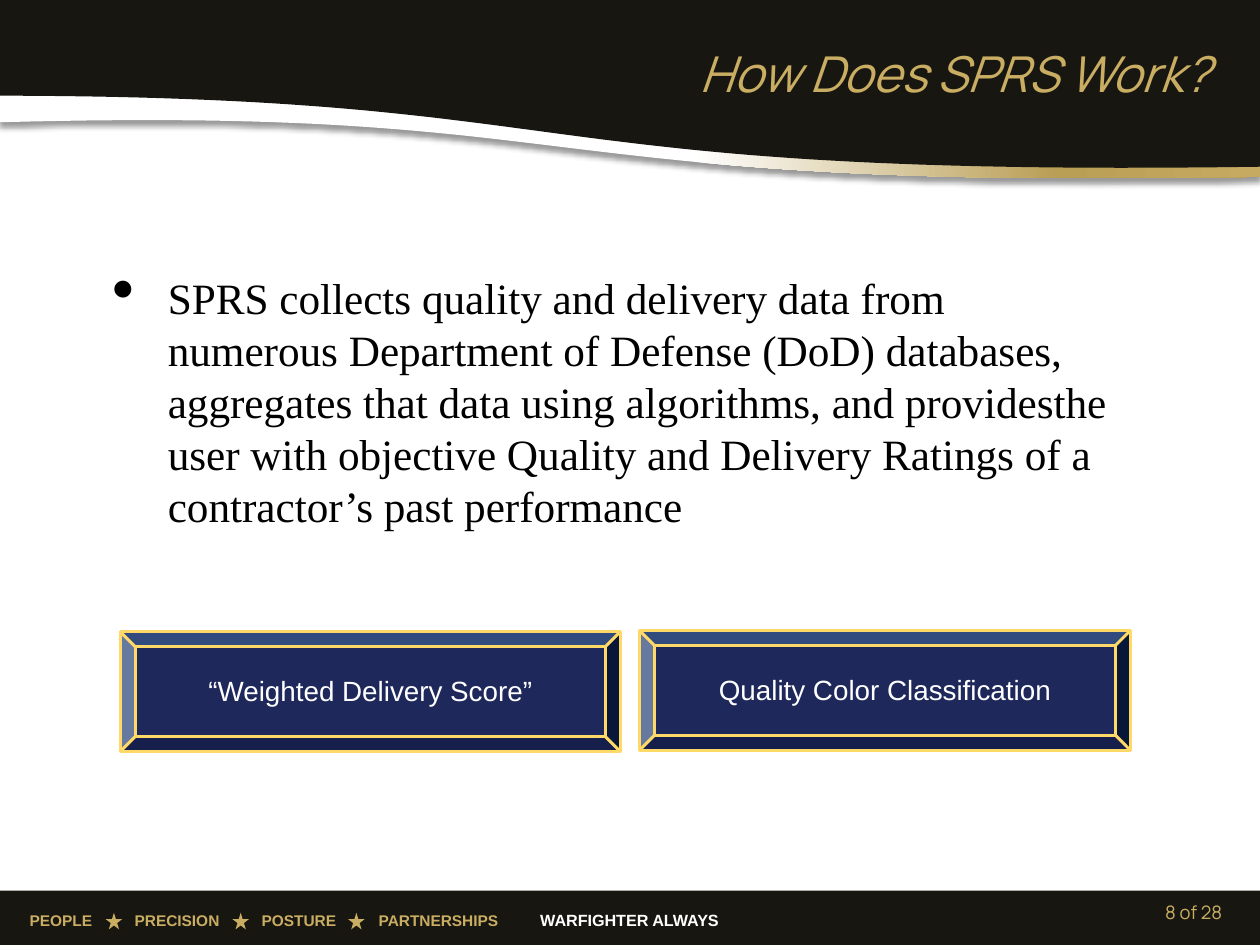
import copy
import lxml.etree
import pptx
import pptx.util
import pptx.dml.color
import pptx.enum.shapes
import pptx.enum.text
import pptx.oxml.ns

Pt = pptx.util.Pt
RGBColor = pptx.dml.color.RGBColor
ALIGN = pptx.enum.text.PP_ALIGN
ANCHOR = pptx.enum.text.MSO_ANCHOR
SHAPE = pptx.enum.shapes.MSO_SHAPE
qn = pptx.oxml.ns.qn

BLACK = RGBColor(0x00, 0x00, 0x00)
WHITE = RGBColor(0xFF, 0xFF, 0xFF)
CHARCOAL = RGBColor(0x17, 0x16, 0x10)
GOLD = RGBColor(0xC9, 0xAD, 0x62)
DARK_GOLD = RGBColor(0xB9, 0x9E, 0x55)
BAND_GOLD = RGBColor(0xC7, 0xAA, 0x61)
TRIM = RGBColor(0xFF, 0xD9, 0x67)
NAVY = RGBColor(0x1F, 0x28, 0x5B)
BEVEL_TOP = RGBColor(0x31, 0x4B, 0x7E)
BEVEL_BOTTOM = RGBColor(0x16, 0x1E, 0x4B)
BEVEL_LEFT = RGBColor(0x66, 0x79, 0x9F)
BEVEL_RIGHT = RGBColor(0x07, 0x16, 0x39)

WIDTH, HEIGHT = 816, 612
deck = pptx.Presentation()
deck.slide_width, deck.slide_height = Pt(WIDTH), Pt(HEIGHT)
page = deck.slides.add_slide(deck.slide_layouts[6])


def add_outline(points, color):
    corners = [(Pt(x), Pt(y)) for x, y in points]
    builder = page.shapes.build_freeform(*corners[0], scale=1.0)
    builder.add_line_segments(corners[1:], close=True)
    outline = builder.convert_to_shape()
    outline.shadow.inherit = False
    outline.fill.solid()
    outline.fill.fore_color.rgb = color
    outline.line.fill.background()
    return outline


def add_text(box, text, font, size, color, align, anchor=ANCHOR.TOP):
    frame = box.text_frame
    frame.word_wrap = True
    frame.vertical_anchor = anchor
    para = frame.paragraphs[0]
    para.alignment = align
    span = para.add_run()
    span.text = text
    span.font.name = font
    span.font.size = Pt(size)
    span.font.color.rgb = color
    return para, span


bands = []
for top, start, (x1, y1), (x2, y2), end, color in (
    (42.5, 79.2, (395.3, 68.4), (326.9, 123.8), 114.5, WHITE),
    (0, 62, (393.1, 62.6), (326, 115.2), 108, CHARCOAL),
):
    points = [(WIDTH, top), (0, top)]
    for step in range(61):
        t = step / 60
        u = 1 - t
        points.append((
            3 * u * u * t * x1 + 3 * u * t * t * x2 + t ** 3 * WIDTH,
            u ** 3 * start + 3 * u * u * t * y1 + 3 * u * t * t * y2 + t ** 3 * end,
        ))
    bands.append(add_outline(points, color))

ribbon = bands[0]
ribbon.fill.gradient()
ribbon.fill.gradient_angle = 0
stop_list = ribbon._element.spPr.find(".//" + qn("a:gsLst"))
stop_list.append(copy.deepcopy(stop_list[0]))
for stop, position, color in zip(
    ribbon.fill.gradient_stops, (0.55, 0.84, 1), (WHITE, DARK_GOLD, BAND_GOLD)
):
    stop.position = position
    stop.color.rgb = color
effects = ribbon._element.spPr.find(qn("a:effectLst"))
shadow = lxml.etree.SubElement(
    effects, qn("a:outerShdw"), blurRad=str(Pt(4)), dist=str(Pt(3)), dir="5400000"
)
shade = lxml.etree.SubElement(shadow, qn("a:srgbClr"), val="000000")
lxml.etree.SubElement(shade, qn("a:alpha"), val="40000")

footer = page.shapes.add_shape(SHAPE.RECTANGLE, 0, Pt(576.7), Pt(WIDTH), Pt(35.3))
stars = [
    page.shapes.add_shape(SHAPE.STAR_5_POINT, Pt(x), Pt(591.1), Pt(10.8), Pt(10.8))
    for x in (68.4, 150.5, 225.4)
]
for shape, color in [(footer, CHARCOAL)] + [(star, GOLD) for star in stars]:
    shape.shadow.inherit = False
    shape.fill.solid()
    shape.fill.fore_color.rgb = color
    shape.line.fill.background()

box = page.shapes.add_textbox(Pt(321.8), Pt(586.1), Pt(172), Pt(20))
para, span = add_text(box, "WARFIGHTER ALWAYS", "Arial", 10.5, WHITE, ALIGN.CENTER)
span.font.bold = True

box = page.shapes.add_textbox(Pt(12.2), Pt(586.8), Pt(332), Pt(20))
values = "\t".join(("PEOPLE", "PRECISION", "POSTURE", "PARTNERSHIPS"))
para, span = add_text(box, values, "Arial", 10, GOLD, ALIGN.LEFT)
span.font.bold = True
tabs = lxml.etree.SubElement(para._p.get_or_add_pPr(), qn("a:tabLst"))
for position in (68, 150.2, 226):
    lxml.etree.SubElement(tabs, qn("a:tab"), pos=str(Pt(position)), algn="l")

box = page.shapes.add_textbox(Pt(191.5), Pt(24.5), Pt(599), Pt(33.8))
para, span = add_text(box, "How Does SPRS Work?", "Manrope", 32, GOLD, ALIGN.RIGHT)
span.font.italic = True

box = page.shapes.add_textbox(Pt(556.6), Pt(574.6), Pt(242), Pt(32.4))
add_text(box, "8 of 28", "Manrope", 12, GOLD, ALIGN.RIGHT, ANCHOR.MIDDLE)

box = page.shapes.add_textbox(Pt(72), Pt(175), Pt(651), Pt(170))
frame = box.text_frame
frame.margin_left = frame.margin_right = frame.margin_bottom = 0
frame.margin_top = Pt(0.7)
para, span = add_text(
    box,
    "SPRS collects quality and delivery data from numerous Department of Defense "
    "(DoD) databases, aggregates that data using algorithms, and providesthe user "
    "with objective Quality and Delivery Ratings of a contractor’s past performance",
    "Times New Roman", 28, BLACK, ALIGN.LEFT,
)
properties = para._p.get_or_add_pPr()
properties.set("marL", str(Pt(36.7)))
properties.set("indent", str(Pt(-36)))
lxml.etree.SubElement(properties, qn("a:buSzPct"), val="150000")
lxml.etree.SubElement(properties, qn("a:buChar"), char="•")

BEVEL = 9.7
BUTTON_HEIGHT = 77.8
for label, left, top, width in (
    ("“Weighted Delivery Score”", 77.8, 409, 324),
    ("Quality Color Classification", 414, 408.2, 318.2),
):
    right, bottom = left + width, top + BUTTON_HEIGHT
    outer = [(left, top), (right, top), (right, bottom), (left, bottom)]
    inner = [
        (left + BEVEL, top + BEVEL), (right - BEVEL, top + BEVEL),
        (right - BEVEL, bottom - BEVEL), (left + BEVEL, bottom - BEVEL),
    ]
    for side, color in enumerate((BEVEL_TOP, BEVEL_RIGHT, BEVEL_BOTTOM, BEVEL_LEFT)):
        after = (side + 1) % 4
        add_outline([outer[side], outer[after], inner[after], inner[side]], color)
    for start, end in zip(outer, inner):
        miter = page.shapes.add_connector(
            pptx.enum.shapes.MSO_CONNECTOR.STRAIGHT, *map(Pt, start + end)
        )
        miter.line.color.rgb = TRIM
        miter.line.width = Pt(1.92)
        lxml.etree.SubElement(miter._element.spPr, qn("a:effectLst"))
    for corners in (outer, inner):
        (x, y), (far_x, far_y) = corners[0], corners[2]
        panel = page.shapes.add_shape(
            SHAPE.RECTANGLE, Pt(x), Pt(y), Pt(far_x - x), Pt(far_y - y)
        )
        panel.shadow.inherit = False
        panel.fill.background()
        panel.line.color.rgb = TRIM
        panel.line.width = Pt(1.92)
    panel.fill.solid()
    panel.fill.fore_color.rgb = NAVY
    frame = panel.text_frame
    frame.margin_left = frame.margin_right = frame.margin_bottom = 0
    frame.margin_top = Pt(17.7)
    add_text(panel, label, "Arial", 18, WHITE, ALIGN.CENTER)

deck.save("out.pptx")
